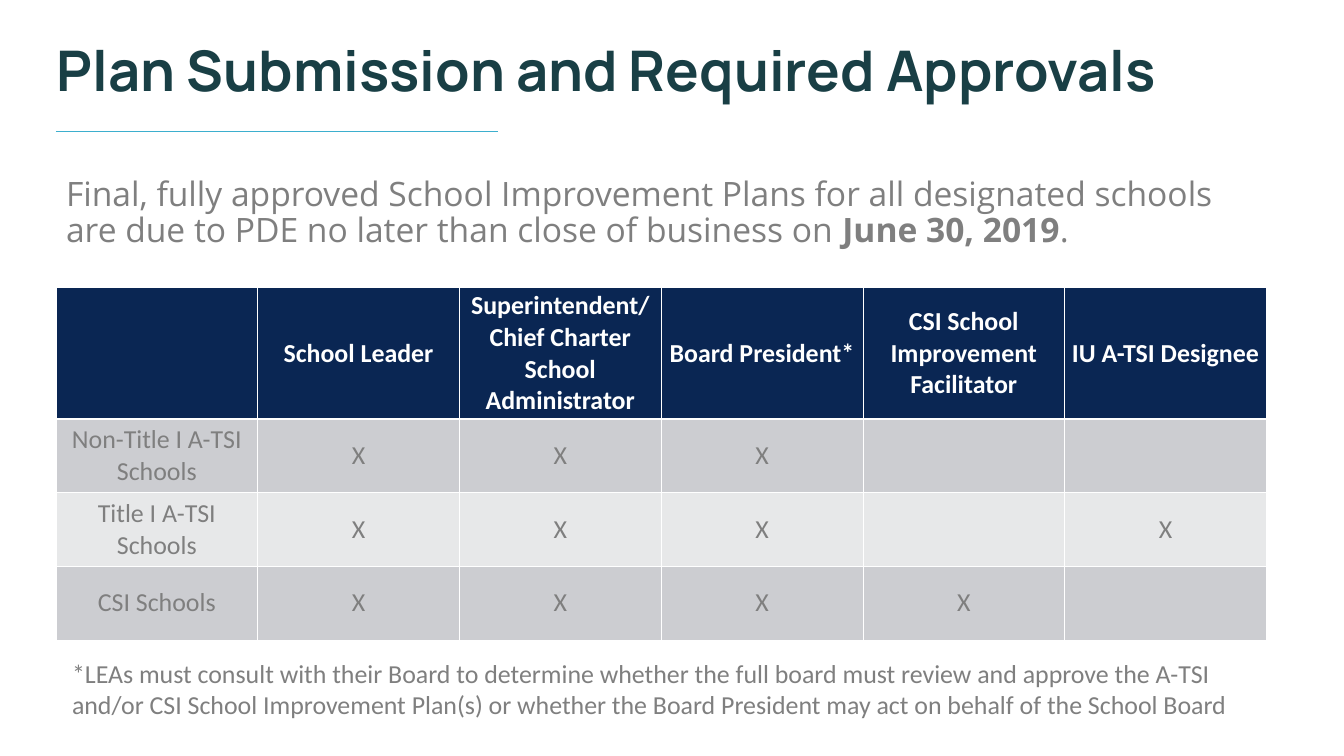
from lxml.etree import SubElement
from pptx import Presentation
from pptx.dml.color import RGBColor
from pptx.enum.shapes import MSO_CONNECTOR
from pptx.enum.text import MSO_ANCHOR, MSO_AUTO_SIZE, PP_ALIGN
from pptx.oxml.ns import qn
from pptx.util import Inches, Pt

WIDTH, HEIGHT = 26.66, 15
LEFT = 1.11
TABLE_TOP, TABLE_WIDTH = 5.71, 24.01
HEADER_HEIGHT, ROW_HEIGHT = 2.56, 1.46
TEAL, NAVY, GRAY, WHITE, BLUE = "193F45", "0A2653", "7F7F7F", "FFFFFF", "3DAFCE"
BANDS = ["CCCDD1", "E7E8E9"]
APPROVALS = [
    ["", "School Leader", "Superintendent/Chief Charter School Administrator",
     "Board President*", "CSI School Improvement Facilitator", "IU A-TSI Designee"],
    ["Non-Title I A-TSI Schools", "X", "X", "X", "", ""],
    ["Title I A-TSI Schools", "X", "X", "X", "", "X"],
    ["CSI Schools", "X", "X", "X", "X", ""],
]
DEADLINE = [
    ("Final, fully approved School Improvement Plans for all designated schools "
     "are due to PDE no later than close of business on ", False),
    ("June 30, 2019", True),
    (".", False),
]
FOOTNOTE = [
    ("*LEAs must consult with their Board to determine whether the full board must "
     "review and approve the A-TSI and/or CSI School Improvement Plan(s) or whether "
     "the Board President may act on behalf of the School Board", False),
]


def color(value):
    """Turn a hex string into a colour."""
    return RGBColor.from_string(value)


def style(paragraph, face, size, tint, bold=False):
    """Set the font shared by a paragraph's runs."""
    font = paragraph.font
    font.name, font.size, font.bold = face, Pt(size), bold
    font.color.rgb = color(tint)


def set_frame(frame, side, end):
    """Wrap a text frame at a fixed size with the given insets."""
    frame.word_wrap = True
    frame.auto_size = MSO_AUTO_SIZE.NONE
    frame.margin_left = frame.margin_right = Inches(side)
    frame.margin_top = frame.margin_bottom = Inches(end)


def add_title(page, text):
    """Place and format the title placeholder."""
    title = page.shapes.title
    title.left, title.top = Inches(0.93), 0
    title.width, title.height = Inches(22.99), Inches(2.9)
    frame = title.text_frame
    set_frame(frame, 0.2, 0.1)
    frame.vertical_anchor = MSO_ANCHOR.MIDDLE
    frame.text = text
    para = frame.paragraphs[0]
    para.alignment, para.line_spacing = PP_ALIGN.LEFT, 0.9
    style(para, "Manrope", 80, TEAL, True)


def add_rule(page, top, length):
    """Draw the thin line below the title."""
    rule = page.shapes.add_connector(
        MSO_CONNECTOR.STRAIGHT, Inches(LEFT), Inches(top), Inches(LEFT + length), Inches(top))
    rule.line.color.rgb = color(BLUE)
    rule.line.width = Pt(1)
    SubElement(rule._element.spPr, qn("a:effectLst"))


def add_text(page, place, insets, spans, face, size, spacing):
    """Add a one-paragraph text box made of plain and bold spans."""
    box = page.shapes.add_textbox(*map(Inches, place))
    set_frame(box.text_frame, *insets)
    para = box.text_frame.paragraphs[0]
    para.line_spacing = spacing
    style(para, face, size, GRAY)
    for text, bold in spans:
        span = para.add_run()
        span.text = text
        if bold:
            span.font.bold = True


def set_borders(cell, **widths):
    """Give a cell white borders of the given widths in points."""
    properties = cell._tc.get_or_add_tcPr()
    for side, width in widths.items():
        line = SubElement(properties, qn(f"a:ln{side}"), w=str(Pt(width)))
        fill = SubElement(line, qn("a:solidFill"))
        SubElement(fill, qn("a:srgbClr"), val=WHITE)


def fill_cell(cell, text, row):
    """Write and format one table cell."""
    header = row == 0
    set_borders(cell, L=1, R=1, T=3 if row == 1 else 1, B=3 if header else 1)
    cell.fill.solid()
    cell.fill.fore_color.rgb = color(NAVY if header else BANDS[(row - 1) % 2])
    cell.vertical_anchor = MSO_ANCHOR.MIDDLE
    cell.text = text
    para = cell.text_frame.paragraphs[0]
    para.alignment = PP_ALIGN.CENTER
    style(para, "Calibri", 37, WHITE if header else GRAY, header)


def add_approvals(page, rows):
    """Add the table of required approvals."""
    heights = [HEADER_HEIGHT] + [ROW_HEIGHT] * (len(rows) - 1)
    table = page.shapes.add_table(
        len(rows), len(rows[0]), Inches(LEFT), Inches(TABLE_TOP),
        Inches(TABLE_WIDTH), Inches(sum(heights))).table
    for row, (texts, height) in enumerate(zip(rows, heights)):
        table.rows[row].height = Inches(height)
        for column, text in enumerate(texts):
            fill_cell(table.cell(row, column), text, row)


def main():
    """Build and save the slide."""
    deck = Presentation()
    deck.slide_width, deck.slide_height = Inches(WIDTH), Inches(HEIGHT)
    page = deck.slides.add_slide(deck.slide_layouts[5])
    add_title(page, "Plan Submission and Required Approvals")
    add_text(page, (LEFT, 3.42, 23.71, 2), (0.2, 0.1), DEADLINE, "Open Sans", 48, 0.9)
    add_rule(page, 2.6, 8.77)
    add_approvals(page, APPROVALS)
    add_text(page, (1.33, 13, 23.79, 1.35), (0.1, 0.05), FOOTNOTE, "Calibri", 37, 1.0)
    deck.save("out.pptx")


if __name__ == "__main__":
    main()
